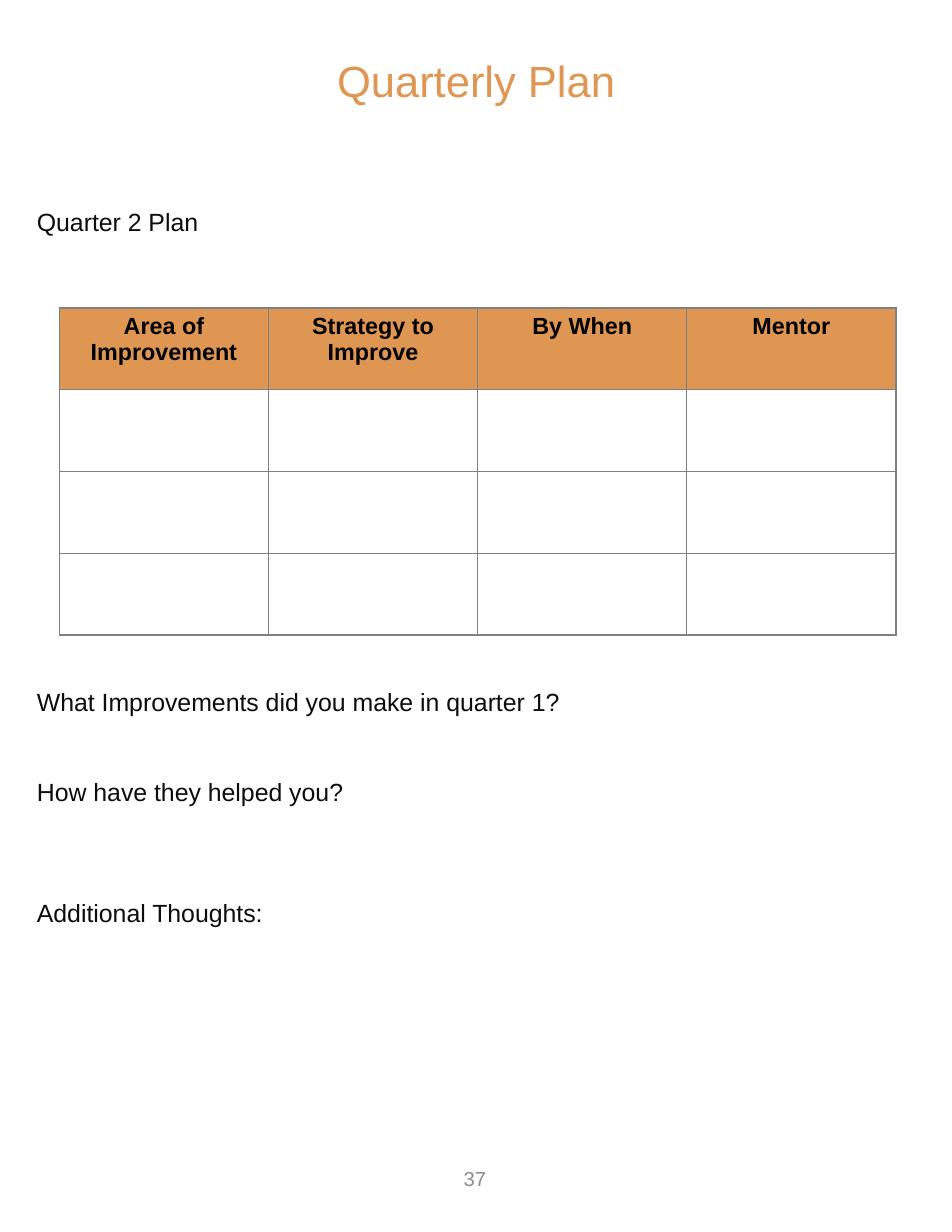
import pptx
import pptx.dml.color
import pptx.enum.text
import pptx.oxml
import pptx.oxml.ns
import pptx.util
from pptx.util import Inches, Pt

ORANGE = "E09653"
GREY = "808080"
CENTER = pptx.enum.text.PP_ALIGN.CENTER
MIDDLE = pptx.enum.text.MSO_ANCHOR.MIDDLE


def rgb(hex_color):
    return pptx.dml.color.RGBColor.from_string(hex_color)


def write(frame, lines, size, color, align=None, bold=False):
    """Fill a text frame with (text, points of space before) lines."""
    frame.word_wrap = True
    frame.margin_left = frame.margin_right = Inches(0.05)
    frame.margin_top = frame.margin_bottom = Inches(0.05)
    for index, (text, space) in enumerate(lines):
        para = frame.add_paragraph() if index else frame.paragraphs[0]
        para.text = text
        para.alignment = align
        if space:
            para.space_before = Pt(space)
        para.font.name = "Arial"
        para.font.size = Pt(size)
        para.font.bold = bold
        para.font.color.rgb = rgb(color)


deck = pptx.Presentation()
deck.slide_width = Inches(8.5)
deck.slide_height = Inches(11)
page = deck.slides.add_slide(deck.slide_layouts[6])

# Questions, with room for the table and for answers between them
questions = page.shapes.add_textbox(Inches(0.28), Inches(1.8), Inches(7.96), Inches(7.65))
write(questions.text_frame, [
    ("Quarter 2 Plan", 0),
    ("What Improvements did you make in quarter 1?", 289),
    ("How have they helped you?", 38.8),
    ("Additional Thoughts:", 58.7),
], 16, "0D0D0D")

title = page.shapes.add_textbox(Inches(0.44), Inches(0.48), Inches(7.62), Inches(0.53))
write(title.text_frame, [("Quarterly Plan", 0)], 28, ORANGE, CENTER)
title.text_frame.vertical_anchor = MIDDLE
title.text_frame.paragraphs[0].line_spacing = 0.9

page_number = page.shapes.add_textbox(Inches(3.25), Inches(10.23), Inches(1.98), Inches(0.59))
write(page_number.text_frame, [("37", 0)], 13, "8C8C8C", CENTER)
page_number.text_frame.vertical_anchor = MIDDLE

# Plan table
headings = ["Area of Improvement", "Strategy to Improve", "By When", "Mentor"]
plan = page.shapes.add_table(4, len(headings), Inches(0.53), Inches(2.75),
                             Inches(7.47), Inches(2.92)).table
plan.horz_banding = False
for row_index, row in enumerate(plan.rows):
    for column_index, cell in enumerate(row.cells):
        properties = cell._tc.get_or_add_tcPr()
        for side in ("lnL", "lnR", "lnT", "lnB"):
            properties.append(pptx.oxml.parse_xml(
                f'<a:{side} {pptx.oxml.ns.nsdecls("a")} w="12700"><a:solidFill>'
                f'<a:srgbClr val="{GREY}"/></a:solidFill></a:{side}>'))
        if row_index == 0:
            cell.fill.solid()
            cell.fill.fore_color.rgb = rgb(ORANGE)
            write(cell.text_frame, [(headings[column_index], 0)], 15, "000000", CENTER, True)
            cell.margin_left = cell.margin_right = Inches(0.05)
            cell.margin_top = cell.margin_bottom = Inches(0.05)
        else:
            cell.fill.background()

deck.save("out.pptx")
